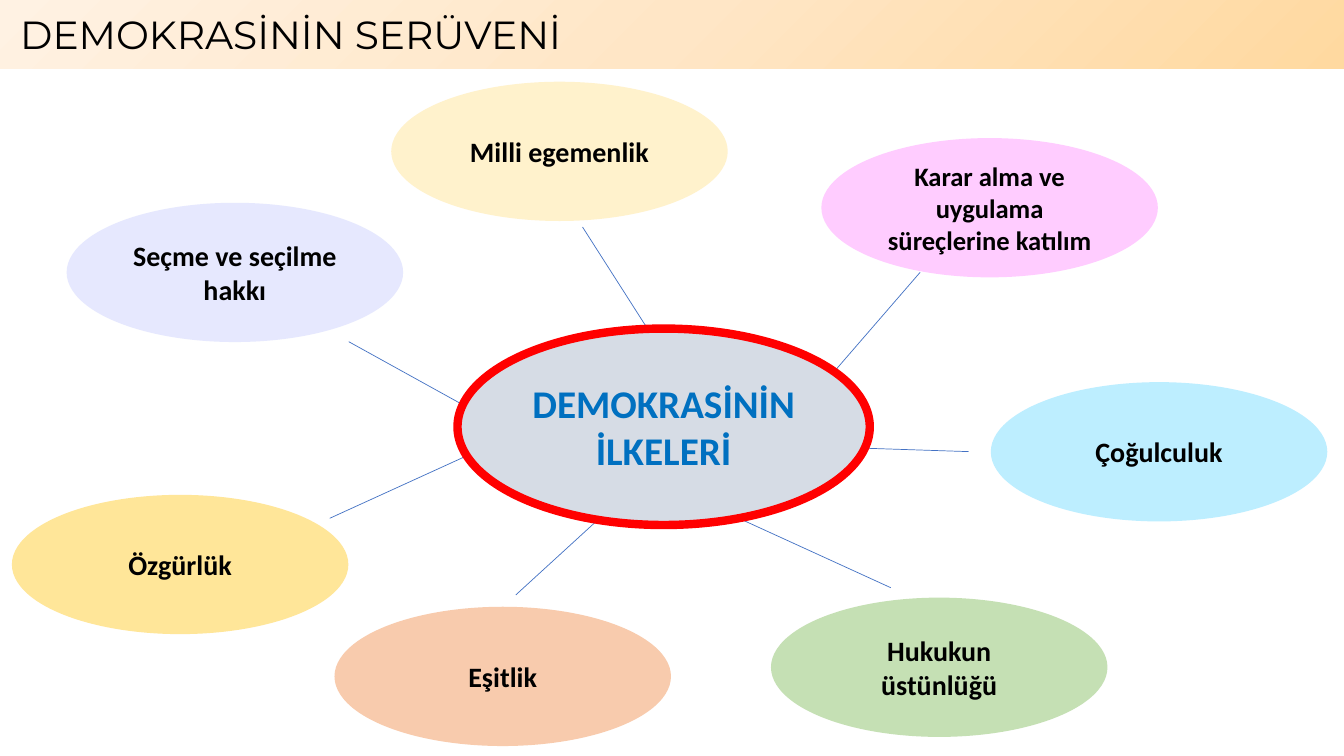
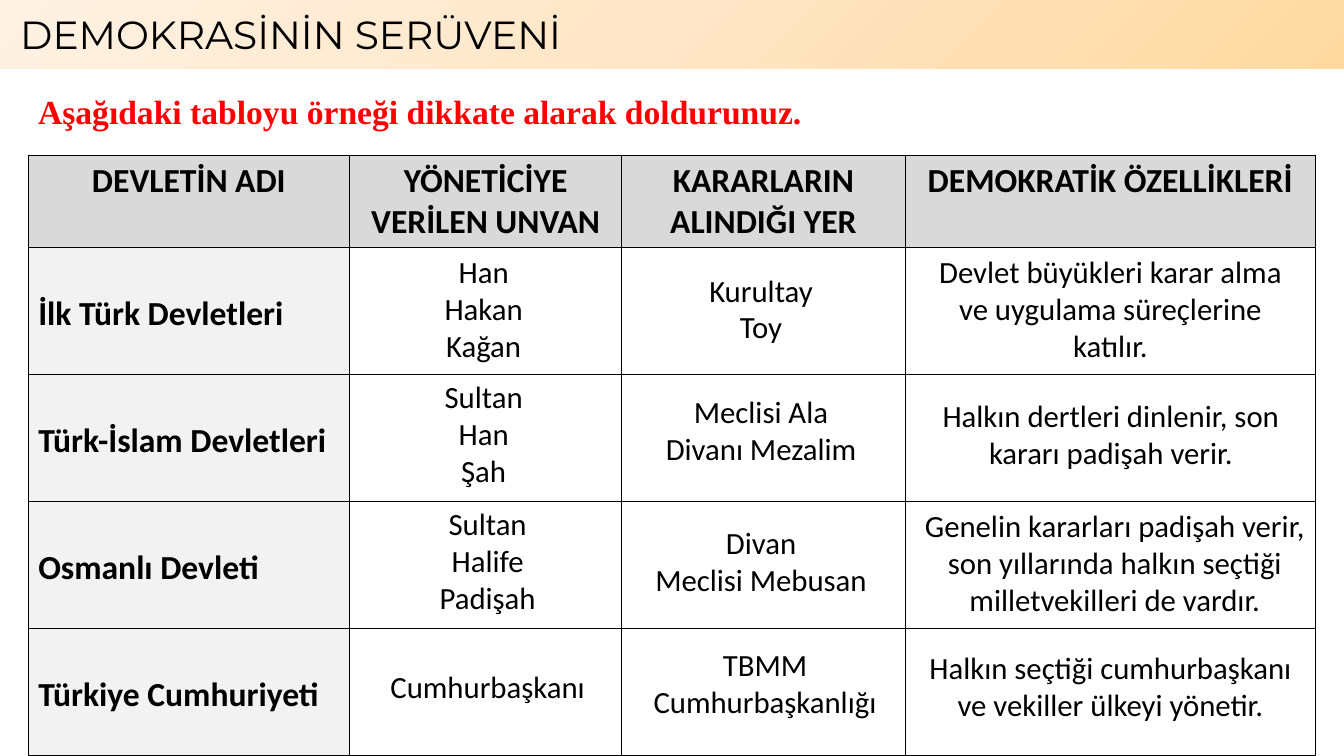
from copy import deepcopy
from dataclasses import dataclass
from typing import NamedTuple

from lxml.etree import SubElement
from pptx import Presentation
from pptx.dml.color import RGBColor
from pptx.enum.shapes import MSO_CONNECTOR, MSO_SHAPE
from pptx.enum.text import MSO_ANCHOR, MSO_AUTO_SIZE, PP_ALIGN
from pptx.oxml.ns import qn
from pptx.util import Cm, Pt

# Shared colours and text formats
BLACK = RGBColor(0x00, 0x00, 0x00)
RED = RGBColor(0xFF, 0x00, 0x00)
BLUE = RGBColor(0x00, 0x70, 0xC0)
SPOKE_BLUE = RGBColor(0x44, 0x72, 0xC4)
HUB_GREY = RGBColor(0xD6, 0xDC, 0xE5)
HEAD_GREY = RGBColor(0xD9, 0xD9, 0xD9)
LABEL_GREY = RGBColor(0xF2, 0xF2, 0xF2)
BAND_STOPS = (
    (0, RGBColor(0xFF, 0xD9, 0xA0)),
    (0.5, RGBColor(0xFF, 0xE6, 0xC6)),
    (1, RGBColor(0xFF, 0xF2, 0xE3)),
)
SLIDE_W, SLIDE_H = 33.87, 19.05

TITLE = {"name": "Montserrat", "size": Pt(28), "bold": False}
HUB = {"name": "Calibri", "size": Pt(28), "bold": True}
BUBBLE = {"name": "Calibri", "size": Pt(20), "bold": True}
CELL = {"name": "Calibri", "size": Pt(24), "bold": True}
ANSWER = {"name": "Calibri", "size": Pt(22), "bold": False}
TASK = {"name": "Times New Roman", "size": Pt(24), "bold": True}


class Point(NamedTuple):
    x: float
    y: float


class Box(NamedTuple):
    x: float
    y: float
    w: float
    h: float

    def lengths(self) -> list:
        return [Cm(v) for v in self]


@dataclass
class Principle:
    text: str
    corner: Point
    fill: RGBColor
    inner: Point
    outer: Point
    size: int = 20


@dataclass
class Answer:
    text: str
    x: float
    y: float
    w: float
    lines: int

    def box(self) -> Box:
        return Box(self.x, self.y, self.w, 0.25 + 0.94 * self.lines)


# Slide 1 content
BUBBLE_W, BUBBLE_H = 8.48, 3.51
HUB_BOX = Box(11.53, 8.28, 10.39, 4.95)
PRINCIPLES = [
    Principle("Milli egemenlik", Point(9.86, 2.06), RGBColor(0xFF, 0xF2, 0xCC),
              Point(16.38, 8.38), Point(14.68, 5.72)),
    Principle("Seçme ve seçilme hakkı", Point(1.68, 5.11), RGBColor(0xE6, 0xE8, 0xFE),
              Point(12.19, 10.49), Point(8.79, 8.61)),
    Principle("Özgürlük", Point(0.3, 12.47), RGBColor(0xFF, 0xE6, 0x99),
              Point(12.17, 11.3), Point(8.31, 13.06)),
    Principle("Eşitlik", Point(8.43, 15.29), RGBColor(0xF8, 0xCB, 0xAD),
              Point(15.11, 13.06), Point(13, 14.99)),
    Principle("Hukukun üstünlüğü", Point(19.43, 15.06), RGBColor(0xC5, 0xE0, 0xB4),
              Point(18.62, 13.06), Point(22.45, 14.81)),
    Principle("Karar alma ve uygulama süreçlerine katılım", Point(20.7, 3.48),
              RGBColor(0xFF, 0xCC, 0xFF), Point(20.93, 9.47), Point(23.19, 6.86), 19),
    Principle("Çoğulculuk", Point(24.97, 9.63), RGBColor(0xBD, 0xEE, 0xFF),
              Point(21.36, 11.28), Point(24.41, 11.38)),
]

# Slide 2 content
COL_WIDTHS = (8.1, 6.86, 7.14, 10.34)
ROW_HEIGHTS = (2.33, 3.2, 3.2, 3.2, 3.2)
HEADINGS = ("DEVLETİN ADI", "YÖNETİCİYE VERİLEN UNVAN",
            "KARARLARIN ALINDIĞI YER", "DEMOKRATİK ÖZELLİKLERİ")
STATES = ("İlk Türk Devletleri", "Türk-İslam Devletleri",
          "Osmanlı Devleti", "Türkiye Cumhuriyeti")
ANSWERS = [
    Answer("Han\nHakan\nKağan", 9.14, 6.25, 6.1, 3),
    Answer("Kurultay\nToy", 16.13, 6.71, 6.1, 2),
    Answer("Devlet büyükleri karar alma ve uygulama süreçlerine katılır.",
           23.39, 6.25, 9.19, 3),
    Answer("Sultan\nHan\nŞah", 9.14, 9.4, 6.1, 3),
    Answer("Meclisi Ala\nDivanı Mezalim", 16.13, 9.78, 6.1, 2),
    Answer("Halkın dertleri dinlenir, son kararı padişah verir.",
           22.94, 9.88, 10.11, 2),
    Answer("Sultan\nHalife\nPadişah", 9.14, 12.6, 6.3, 3),
    Answer("Divan\nMeclisi Mebusan", 16.03, 13.08, 6.3, 2),
    Answer("Genelin kararları padişah verir, son yıllarında halkın seçtiği "
           "milletvekilleri de vardır.", 22.89, 12.65, 10.41, 3),
    Answer("Cumhurbaşkanı", 9.14, 16.71, 6.3, 1),
    Answer("TBMM\nCumhurbaşkanlığı", 16.13, 16.15, 6.3, 2),
    Answer("Halkın seçtiği cumhurbaşkanı ve vekiller ülkeyi yönetir.",
           23.16, 16.23, 9.65, 2),
]


# Drawing helpers
def write(tf, text: str, style: dict, color: RGBColor = BLACK,
          align: PP_ALIGN = PP_ALIGN.CENTER) -> None:
    p = tf.paragraphs[0]
    p.text = text
    p.alignment = align
    for r in p.runs:
        for key, value in style.items():
            setattr(r.font, key, value)
        r.font.color.rgb = color


def add_plain_shape(s, kind: MSO_SHAPE, box: Box):
    sp = s.shapes.add_shape(kind, *box.lengths())
    sp.shadow.inherit = False
    sp.line.fill.background()
    sp.text_frame.word_wrap = True
    sp.text_frame.vertical_anchor = MSO_ANCHOR.MIDDLE
    return sp


def add_ellipse(s, box: Box, fill: RGBColor, text: str, style: dict,
                color: RGBColor = BLACK):
    sp = add_plain_shape(s, MSO_SHAPE.OVAL, box)
    sp.fill.solid()
    sp.fill.fore_color.rgb = fill
    write(sp.text_frame, text, style, color)
    return sp


def add_spoke(s, start: Point, end: Point) -> None:
    line = s.shapes.add_connector(MSO_CONNECTOR.STRAIGHT,
                                  *[Cm(v) for v in (*start, *end)])
    line.line.color.rgb = SPOKE_BLUE
    line.line.width = Pt(0.5)
    SubElement(line._element.spPr, qn("a:effectLst"))


def add_text(s, box: Box, text: str, style: dict, color: RGBColor = BLACK,
             align: PP_ALIGN = PP_ALIGN.CENTER) -> None:
    tf = s.shapes.add_textbox(*box.lengths()).text_frame
    tf.word_wrap = True
    tf.auto_size = MSO_AUTO_SIZE.SHAPE_TO_FIT_TEXT
    write(tf, text, style, color, align)


def add_title_band(s) -> None:
    sp = add_plain_shape(s, MSO_SHAPE.RECTANGLE, Box(0, 0, SLIDE_W, 1.73))
    sp.fill.gradient()
    sp.fill.gradient_angle = 135
    first = sp._element.spPr.find(".//" + qn("a:gs"))
    first.addnext(deepcopy(first))
    for stop, (position, color) in zip(sp.fill.gradient_stops, BAND_STOPS):
        stop.position = position
        stop.color.rgb = color
    sp.text_frame.margin_left = Cm(0.51)
    write(sp.text_frame, "DEMOKRASİNİN SERÜVENİ", TITLE, align=PP_ALIGN.LEFT)


def set_borders(cell) -> None:
    tc_pr = cell._tc.get_or_add_tcPr()
    for i, side in enumerate(("lnL", "lnR", "lnT", "lnB")):
        ln = tc_pr.makeelement(qn(f"a:{side}"), {"w": str(Pt(1))})
        fill = SubElement(ln, qn("a:solidFill"))
        SubElement(fill, qn("a:srgbClr"), val=str(BLACK))
        tc_pr.insert(i, ln)


def fill_cell(cell, fill: RGBColor) -> None:
    cell.fill.solid()
    cell.fill.fore_color.rgb = fill


# Slides
def build_principles(s) -> None:
    for item in PRINCIPLES:
        add_spoke(s, item.inner, item.outer)
    for item in PRINCIPLES:
        add_ellipse(s, Box(*item.corner, BUBBLE_W, BUBBLE_H), item.fill,
                    item.text, BUBBLE | {"size": Pt(item.size)})
    hub = add_ellipse(s, HUB_BOX, HUB_GREY, "DEMOKRASİNİN İLKELERİ", HUB, BLUE)
    hub.line.color.rgb = RED
    hub.line.width = Pt(6)


def build_states(s) -> None:
    box = Box(0.71, 3.91, sum(COL_WIDTHS), sum(ROW_HEIGHTS))
    table = s.shapes.add_table(len(ROW_HEIGHTS), len(COL_WIDTHS),
                               *box.lengths()).table
    table.first_row = table.horz_banding = False
    for col, width in zip(table.columns, COL_WIDTHS):
        col.width = Cm(width)
    for row, height in zip(table.rows, ROW_HEIGHTS):
        row.height = Cm(height)
    for cell in table.iter_cells():
        cell.fill.background()
        set_borders(cell)
    for c, heading in enumerate(HEADINGS):
        cell = table.cell(0, c)
        fill_cell(cell, HEAD_GREY)
        write(cell.text_frame, heading, CELL)
    for r, state in enumerate(STATES, start=1):
        cell = table.cell(r, 0)
        fill_cell(cell, LABEL_GREY)
        cell.vertical_anchor = MSO_ANCHOR.MIDDLE
        cell.margin_top = Cm(0.3)
        write(cell.text_frame, state, CELL, align=PP_ALIGN.LEFT)
    for answer in ANSWERS:
        add_text(s, answer.box(), answer.text, ANSWER)
    add_text(s, Box(0.71, 2.16, 21, 1.27),
             "Aşağıdaki tabloyu örneği dikkate alarak doldurunuz.",
             TASK, RED, PP_ALIGN.LEFT)


def main() -> None:
    prs = Presentation()
    prs.slide_width, prs.slide_height = Cm(SLIDE_W), Cm(SLIDE_H)
    for build in (build_principles, build_states):
        s = prs.slides.add_slide(prs.slide_layouts[6])
        add_title_band(s)
        build(s)
    prs.save("out.pptx")


if __name__ == "__main__":
    main()
